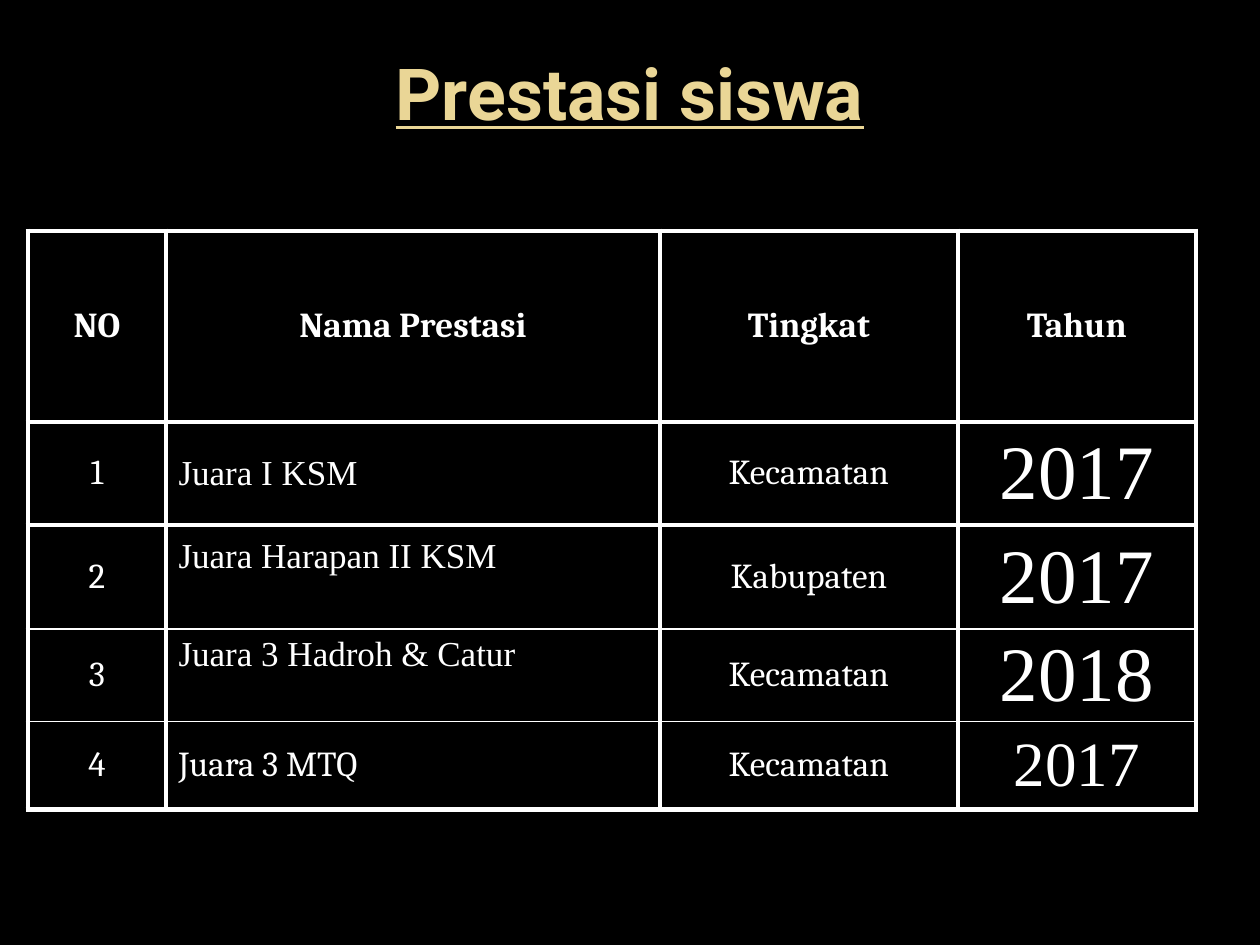
from dataclasses import dataclass

from lxml.etree import SubElement
from pptx import Presentation
from pptx.dml.color import RGBColor
from pptx.enum.text import MSO_ANCHOR as Anchor, PP_ALIGN as Align
from pptx.oxml.ns import qn
from pptx.util import Pt

EMU_PER_PX = 914400 / 126
THICK, THIN = 3, 1


def px(length):
    return round(length * EMU_PER_PX)


@dataclass(frozen=True)
class Theme:
    background: str = "000000"
    text: str = "FFFFFF"
    title_start: str = "EAD696"
    title_end: str = "E7D081"
    title_font: str = "Roboto"
    body_font: str = "Cambria"
    plain_font: str = "Times New Roman"
    title_size: int = 41
    body_size: int = 20
    year_size: int = 44
    last_year_size: int = 36


def set_values(target, values):
    for name, value in values.items():
        setattr(target, name, value)


class SlideBuilder:
    def __init__(self, slide, theme):
        self.slide = slide
        self.theme = theme
        fill = slide.background.fill
        fill.solid()
        fill.fore_color.rgb = RGBColor.from_string(theme.background)

    def add_text(self, frame, text, align, **font_values):
        paragraph = frame.paragraphs[0]
        paragraph.alignment = align
        run = paragraph.add_run()
        run.text = text
        set_values(run.font, font_values)
        return run

    def title(self, text, box):
        theme = self.theme
        frame = self.slide.shapes.add_textbox(*map(px, box)).text_frame
        set_values(frame, {"word_wrap": True, "vertical_anchor": Anchor.MIDDLE})
        run = self.add_text(frame, text, Align.CENTER, name=theme.title_font,
                            size=Pt(theme.title_size), bold=True, underline=True)
        fill = run.font.fill
        fill.gradient()
        fill.gradient_angle = 280
        stops = ((0.73, theme.title_start), (1, theme.title_end))
        for stop, (position, color) in zip(fill.gradient_stops, stops):
            stop.position = position
            stop.color.rgb = RGBColor.from_string(color)

    def table(self, left, top, columns, rows):
        frame = self.slide.shapes.add_table(
            len(rows), len(columns), px(left), px(top),
            px(sum(columns)), px(sum(rows)))
        table = frame.table
        set_values(table, {"first_row": False, "horz_banding": False})
        for column, width in zip(table.columns, columns):
            column.width = px(width)
        for row, height in zip(table.rows, rows):
            row.height = px(height)
        return table

    def cell(self, cell, text, borders, align=Align.CENTER, layout=None, **font_values):
        """Fill one cell; borders are widths in points: left, right, top, bottom."""
        theme = self.theme
        set_values(cell, {"vertical_anchor": Anchor.MIDDLE, **(layout or {})})
        values = {"name": theme.body_font, "size": Pt(theme.body_size), "bold": False}
        run = self.add_text(cell.text_frame, text, align, **{**values, **font_values})
        run.font.color.rgb = RGBColor.from_string(theme.text)
        self.borders(cell, borders)
        cell.fill.background()

    def borders(self, cell, widths):
        properties = cell._tc.get_or_add_tcPr()
        for side, width in zip("LRTB", widths):
            line = SubElement(properties, qn(f"a:ln{side}"), w=str(Pt(width)))
            fill = SubElement(line, qn("a:solidFill"))
            SubElement(fill, qn("a:srgbClr"), val=self.theme.text)


HEADERS = ("NO", "Nama Prestasi", "Tingkat", "Tahun")
AWARDS = (
    ("1", "Juara I KSM", "Kecamatan", "2017"),
    ("2", "Juara Harapan II KSM", "Kabupaten", "2017"),
    ("3", "Juara 3 Hadroh & Catur", "Kecamatan", "2018"),
    ("4", "Juara 3 MTQ", "Kecamatan", "2017"),
)
COLUMN_WIDTHS = (138, 494, 298, 238)
ROW_HEIGHTS = (191, 103, 104, 92, 88)
ROW_LINES = (THICK, THICK, THICK, THIN, THIN, THICK)
RAISED_NAMES = {2: 12, 3: 6}  # row: top margin in px


def award_formats(theme, row):
    """Formats of the four cells in one award row."""
    is_last = row == len(AWARDS)
    name = {"align": Align.LEFT}
    if not is_last:
        name["name"] = theme.plain_font
    if row in RAISED_NAMES:
        name["layout"] = {"vertical_anchor": Anchor.TOP,
                          "margin_top": px(RAISED_NAMES[row])}
    year = {
        "name": theme.plain_font,
        "size": Pt(theme.last_year_size if is_last else theme.year_size),
        "layout": {"margin_left": px(9), "margin_right": px(9),
                   "margin_top": 0, "margin_bottom": 0},
    }
    return {}, name, {}, year


def main():
    presentation = Presentation()
    presentation.slide_width, presentation.slide_height = px(1260), px(945)
    theme = Theme()
    slide = presentation.slides.add_slide(presentation.slide_layouts[6])
    builder = SlideBuilder(slide, theme)

    builder.title("Prestasi siswa", (63, 38, 1134, 107))
    table = builder.table(28, 231, COLUMN_WIDTHS, ROW_HEIGHTS)
    for row, texts in enumerate((HEADERS, *AWARDS)):
        formats = award_formats(theme, row) if row else [{"bold": True}] * len(HEADERS)
        borders = (THICK, THICK, ROW_LINES[row], ROW_LINES[row + 1])
        for column, (text, values) in enumerate(zip(texts, formats)):
            builder.cell(table.cell(row, column), text, borders, **values)

    presentation.save("out.pptx")


if __name__ == "__main__":
    main()
